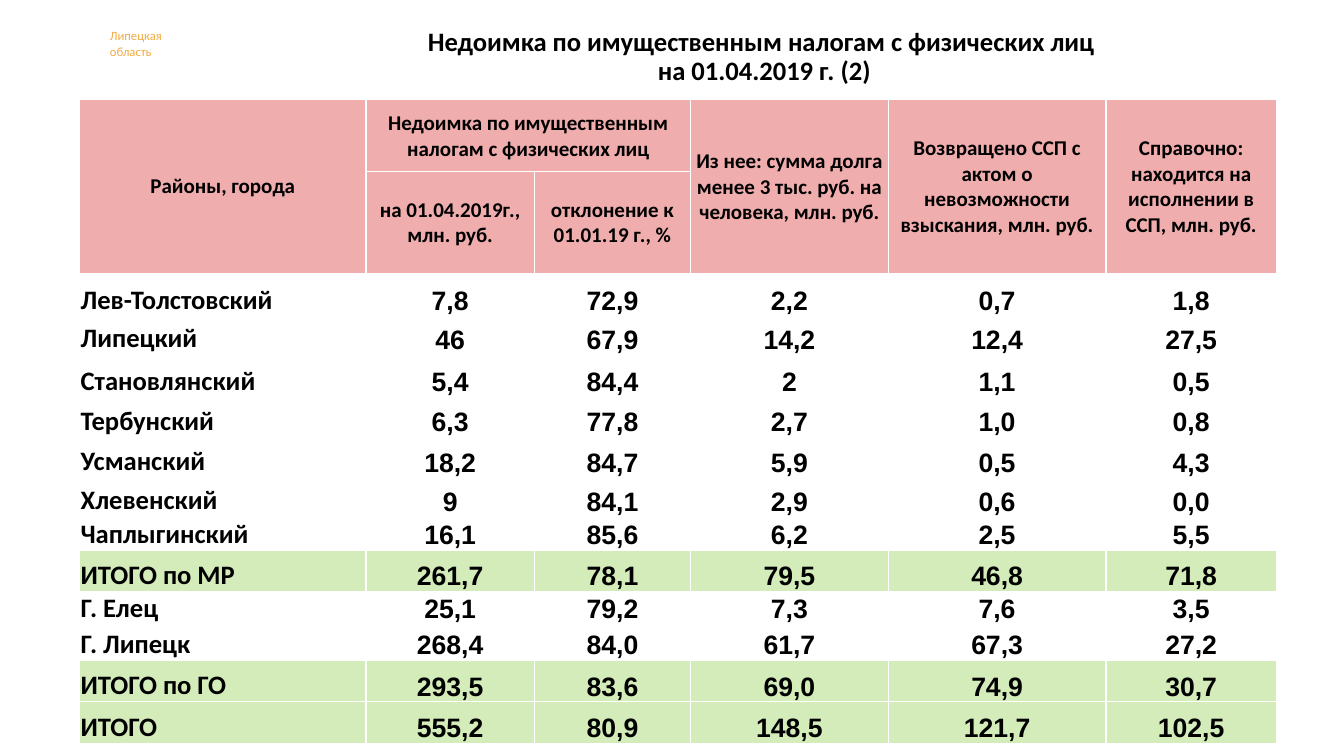
"""Builds the slide on overdue property taxes by district of the Lipetsk region."""
from copy import deepcopy

from lxml import etree
from pptx import Presentation
from pptx.dml.color import RGBColor
from pptx.enum.text import MSO_ANCHOR as ANCHOR, MSO_AUTO_SIZE as AUTO, PP_ALIGN as ALIGN
from pptx.oxml.ns import qn
from pptx.util import Pt

PX = 9144
PINK, GREEN, WHITE, BLACK, AMBER = "F0ADAD", "D3ECB9", "FFFFFF", "000000", "F2AC44"
COLS = [284, 167, 155, 196, 216, 169]
ROWS = [71, 68, 43, 38, 42, 40, 40, 39, 32, 41, 32, 36, 41, 41]
HEADER = [
    ["Районы, города", "Недоимка по имущественным налогам с физических лиц", "",
     "Из нее: сумма долга менее 3 тыс. руб. на человека, млн. руб.",
     "Возвращено ССП с актом о невозможности взыскания, млн. руб.",
     "Справочно: находится на исполнении в ССП, млн. руб."],
    ["", "на 01.04.2019г., млн. руб.", "отклонение к 01.01.19 г., %", "", "", ""],
]
DATA = [
    ["Лев-Толстовский", "7,8", "72,9", "2,2", "0,7", "1,8"],
    ["Липецкий", "46", "67,9", "14,2", "12,4", "27,5"],
    ["Становлянский", "5,4", "84,4", "2", "1,1", "0,5"],
    ["Тербунский", "6,3", "77,8", "2,7", "1,0", "0,8"],
    ["Усманский", "18,2", "84,7", "5,9", "0,5", "4,3"],
    ["Хлевенский", "9", "84,1", "2,9", "0,6", "0,0"],
    ["Чаплыгинский", "16,1", "85,6", "6,2", "2,5", "5,5"],
    ["ИТОГО по МР", "261,7", "78,1", "79,5", "46,8", "71,8"],
    ["Г. Елец", "25,1", "79,2", "7,3", "7,6", "3,5"],
    ["Г. Липецк", "268,4", "84,0", "61,7", "67,3", "27,2"],
    ["ИТОГО по ГО", "293,5", "83,6", "69,0", "74,9", "30,7"],
    ["ИТОГО", "555,2", "80,9", "148,5", "121,7", "102,5"],
]


def style(p, size, color=BLACK, name="Calibri", bold=True, align=ALIGN.CENTER):
    """Formats the runs of a paragraph."""
    p.alignment = align
    for r in p.runs:
        r.font.size, r.font.name, r.font.bold = Pt(size), name, bold
        r.font.color.rgb = RGBColor.from_string(color)


def margins(box, left, top, right, bottom):
    """Sets the inner margins of a cell or text frame in px."""
    box.margin_left, box.margin_top = left * PX, top * PX
    box.margin_right, box.margin_bottom = right * PX, bottom * PX


prs = Presentation()
prs.slide_width, prs.slide_height = 1333 * PX, 750 * PX
s = prs.slides.add_slide(prs.slide_layouts[5])
s.background.fill.solid()
s.background.fill.fore_color.rgb = RGBColor.from_string(WHITE)

title = s.shapes.title
title.left, title.top, title.width, title.height = 210 * PX, 25 * PX, 1096 * PX, 64 * PX
tf = title.text_frame
tf.word_wrap, tf.auto_size, tf.vertical_anchor = True, AUTO.NONE, ANCHOR.MIDDLE
margins(tf, 7, 4, 7, 4)
p = tf.paragraphs[0]
p.text = "Недоимка по имущественным налогам с физических лиц \vна 01.04.2019 г. (2)"
p.line_spacing = 0.9
style(p, 19)
for br in p._p.findall(qn("a:br")):
    br.append(deepcopy(p.runs[0]._r.rPr))

tf = s.shapes.add_textbox(102 * PX, 24 * PX, 91 * PX, 39 * PX).text_frame
tf.word_wrap, tf.auto_size = True, AUTO.SHAPE_TO_FIT_TEXT
margins(tf, 7, 4, 7, 4)
tf.text = "Липецкая\nобласть"
for p in tf.paragraphs:
    style(p, 9, AMBER, bold=False, align=ALIGN.LEFT)

table = s.shapes.add_table(len(ROWS), len(COLS), 79 * PX, 99 * PX,
                           sum(COLS) * PX, sum(ROWS) * PX).table
table.first_row = table.horz_banding = False
for col, width in zip(table.columns, COLS):
    col.width = width * PX
for row, height in zip(table.rows, ROWS):
    row.height = height * PX
table.cell(0, 1).merge(table.cell(0, 2))
for j in (0, 3, 4, 5):
    table.cell(0, j).merge(table.cell(1, j))

for i, texts in enumerate(HEADER + DATA):
    header = i < len(HEADER)
    fill = PINK if header else GREEN if texts[0].startswith("ИТОГО") else WHITE
    for j, text in enumerate(texts):
        cell = table.cell(i, j)
        cell.text = text
        cell.vertical_anchor = ANCHOR.MIDDLE if header else ANCHOR.BOTTOM
        margins(cell, *((10, 5, 10, 5) if i == j == 0 else (1, 1, 1, 0)))
        style(cell.text_frame.paragraphs[0], 15 if header else 19,
              name="Calibri" if header or j == 0 else "Arial",
              align=ALIGN.CENTER if header or j else ALIGN.LEFT)
        cell.fill.solid()
        cell.fill.fore_color.rgb = RGBColor.from_string(fill)
        tcPr = cell._tc.get_or_add_tcPr()
        for k, side in enumerate(("a:lnL", "a:lnR", "a:lnT", "a:lnB")):
            ln = etree.Element(qn(side), w=str(Pt(1)))
            etree.SubElement(etree.SubElement(ln, qn("a:solidFill")), qn("a:srgbClr"), val=WHITE)
            tcPr.insert(k, ln)

prs.save("out.pptx")
